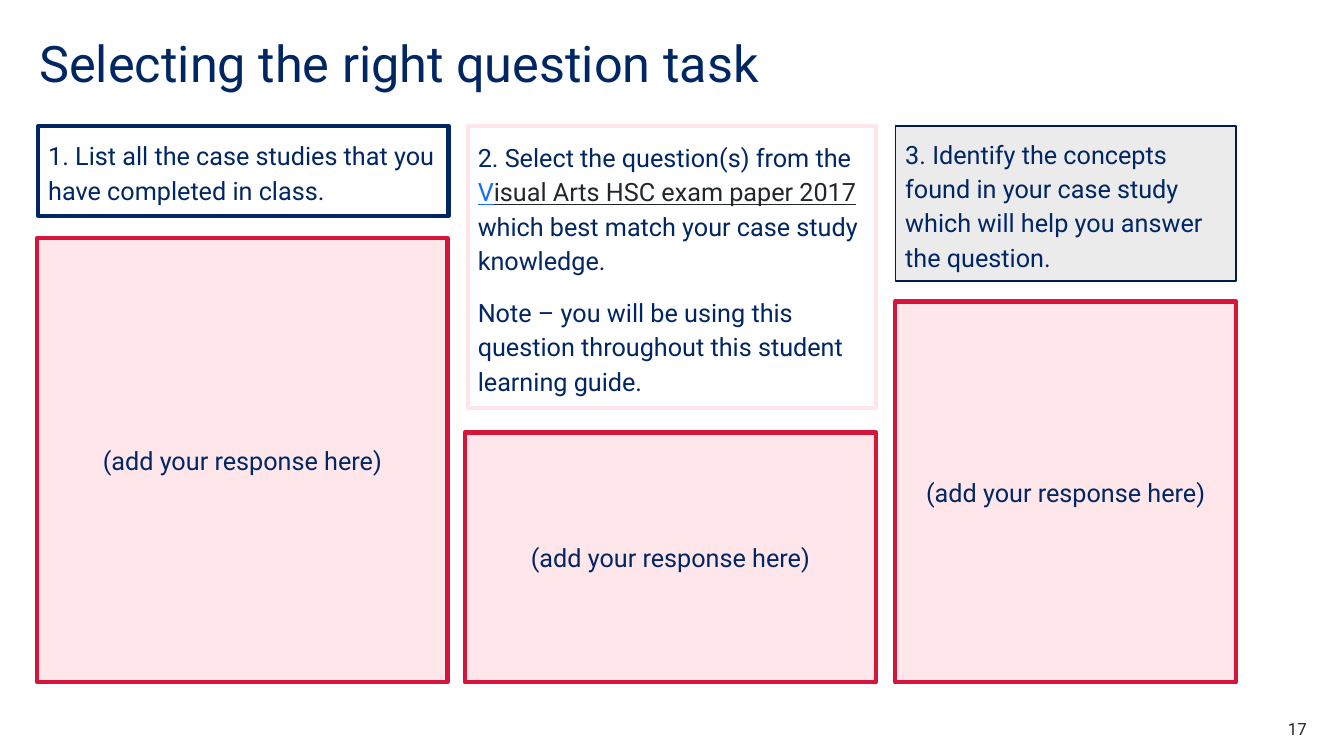
from pptx import Presentation
from pptx.dml.color import RGBColor
from pptx.enum.shapes import MSO_SHAPE as SHAPE
from pptx.enum.text import MSO_ANCHOR as ANCHOR, PP_ALIGN as ALIGN
from pptx.util import Inches, Pt

NAVY, RED, PINK = "002664", "D7153A", "FFE6EA"
BLUE, INK, WHITE, GREY, DARK = "146CFD", "22272B", "FFFFFF", "EBEBEB", "001C4A"
BOTTOM = 6.77


def rgb(value):
    return RGBColor.from_string(value)


class SlideBuilder:
    font = "Roboto"

    def __init__(self, prs):
        self.s = prs.slides.add_slide(prs.slide_layouts[6])

    def add_text(self, tf, paragraphs, size=18, align=ALIGN.LEFT, spacing=1.0):
        tf.word_wrap = True
        for i, runs in enumerate(paragraphs):
            p = tf.add_paragraph() if i else tf.paragraphs[0]
            p.alignment = align
            p.line_spacing = spacing
            if i:
                p.space_before = Pt(12)
            for text, color, underline in runs:
                r = p.add_run()
                r.text = text
                r.font.name = self.font
                r.font.size = Pt(size)
                r.font.color.rgb = rgb(color)
                r.font.underline = underline

    def label(self, box, text, size, color, **style):
        tf = self.s.shapes.add_textbox(*map(Inches, box)).text_frame
        tf.margin_left = tf.margin_right = tf.margin_top = tf.margin_bottom = 0
        self.add_text(tf, [[(text, color, False)]], size, **style)

    def panel(self, box, paragraphs, fill, line, width=3, **style):
        sp = self.s.shapes.add_shape(SHAPE.RECTANGLE, *map(Inches, box))
        sp.shadow.inherit = False
        if fill:
            sp.fill.solid()
            sp.fill.fore_color.rgb = rgb(fill)
        else:
            sp.fill.background()
        sp.line.color.rgb = rgb(line)
        sp.line.width = Pt(width)
        tf = sp.text_frame
        tf.vertical_anchor = ANCHOR.MIDDLE
        self.add_text(tf, paragraphs, **style)

    def task(self, box, paragraphs, fill, line, width=3):
        self.panel(box, paragraphs, fill, line, width, spacing=1.14)

    def response(self, left, top, width):
        self.panel((left, top, width, BOTTOM - top),
                   [[("(add your response here)", NAVY, False)]],
                   PINK, RED, align=ALIGN.CENTER)


def main():
    prs = Presentation()
    prs.slide_width, prs.slide_height = Inches(13.33), Inches(7.5)
    slide = SlideBuilder(prs)
    slide.label((0.39, 0.39, 11.02, 1.1), "Selecting the right question task",
                36, NAVY, spacing=0.9)

    list_cases = [[("1. List all the case studies that you have completed in class.",
                    NAVY, False)]]
    select_question = [
        [("2. Select the question(s) from the ", NAVY, False),
         ("V", BLUE, True),
         ("isual Arts HSC exam paper 2017", INK, True),
         (" ", BLUE, False),
         ("which best match your case study knowledge.", NAVY, False)],
        [("Note – you will be using this question throughout this student "
          "learning guide.", NAVY, False)],
    ]
    identify_concepts = [[("3. Identify the concepts found in your case study which "
                           "will help you answer the question.", NAVY, False)]]

    slide.task((0.38, 1.25, 4.07, 0.89), list_cases, None, NAVY)
    slide.task((4.64, 1.25, 4.05, 2.8), select_question, WHITE, PINK)
    slide.task((8.88, 1.25, 3.38, 1.54), identify_concepts, GREY, DARK, 1)

    for left, top, width in ((0.37, 2.36, 4.07), (4.61, 4.29, 4.08), (8.88, 2.99, 3.38)):
        slide.response(left, top, width)

    slide.label((12.17, 7.13, 0.79, 0.2), "17", 12, INK, align=ALIGN.RIGHT)
    prs.save("out.pptx")


if __name__ == "__main__":
    main()
